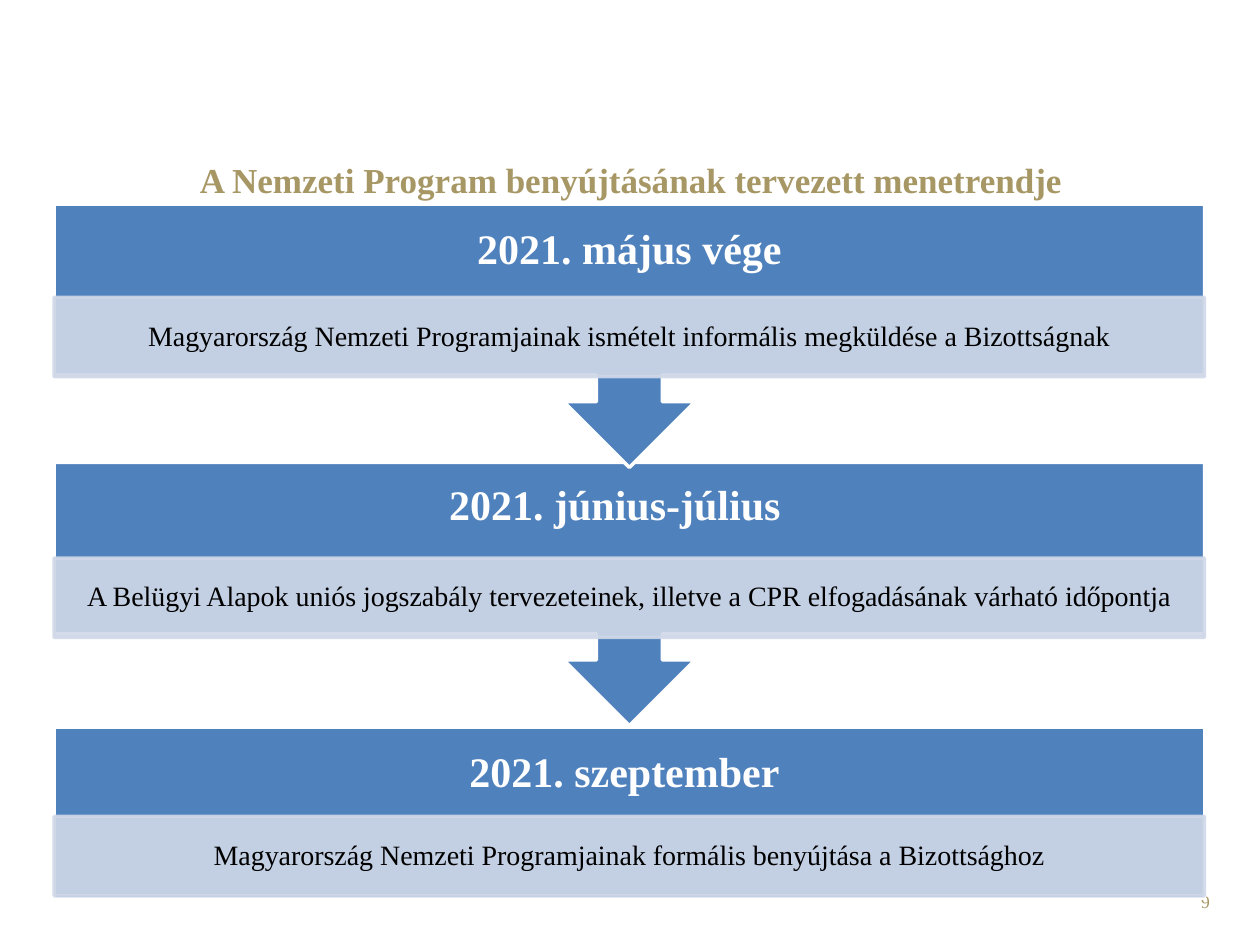
from lxml.etree import SubElement
from pptx import Presentation
from pptx.dml.color import RGBColor
from pptx.enum.shapes import MSO_SHAPE
from pptx.enum.text import MSO_ANCHOR, PP_ALIGN
from pptx.oxml.ns import qn
from pptx.util import Inches, Pt

FONT = "Times New Roman"
GOLD, BLUE, PALE, WHITE, BLACK = "A69765", "4F81BD", "D0D8E8", "FFFFFF", "000000"
LEFT, WIDTH = 0.43, 9.13
HEADING_HEIGHT, DETAIL_HEIGHT = 0.74, 0.63


def paint(color_format, color, opacity=100):
    """Make a fill solid in a hex colour at a percentage of opacity."""
    color_format.solid()
    color_format.fore_color.rgb = RGBColor.from_string(color)
    if opacity < 100:
        rgb = color_format._xPr.find(qn("a:solidFill"))[0]
        SubElement(rgb, qn("a:alpha"), val=str(opacity * 1000))


def write(frame, text, size, color, bold=False, align=PP_ALIGN.CENTER,
          anchor=MSO_ANCHOR.MIDDLE, insets=(0.1, 0.05), spacing=None):
    """Put one formatted run in a text frame."""
    frame.word_wrap = True
    frame.vertical_anchor = anchor
    frame.margin_left = frame.margin_right = Inches(insets[0])
    frame.margin_top = frame.margin_bottom = Inches(insets[1])
    paragraph = frame.paragraphs[0]
    paragraph.alignment = align
    if spacing:
        paragraph.line_spacing = spacing
    run = paragraph.add_run()
    run.text = text
    run.font.name, run.font.size, run.font.bold = FONT, Pt(size), bold
    run.font.color.rgb = RGBColor.from_string(color)


def add_text(slide, box, text, size, color, **style):
    """Add a text box at left, top, width, height."""
    write(slide.shapes.add_textbox(*map(Inches, box)).text_frame, text, size, color, **style)


def add_block(slide, kind, top, height, fill, line, opacity=100):
    """Add a full-width outlined block of the flow."""
    block = slide.shapes.add_shape(kind, *map(Inches, (LEFT, top, WIDTH, height)))
    block.shadow.inherit = False
    paint(block.fill, fill, opacity)
    paint(block.line.fill, line, opacity)
    block.line.width = Pt(2)
    return block


def add_step(slide, top, detail_top, detail, is_last):
    """Add one step: its block, with an arrow unless last, and its detail bar."""
    if is_last:
        add_block(slide, MSO_SHAPE.RECTANGLE, top, 1.36, BLUE, WHITE)
    else:
        add_block(slide, MSO_SHAPE.UP_ARROW_CALLOUT, top, 2.09, BLUE, WHITE).rotation = 180
    bar = add_block(slide, MSO_SHAPE.RECTANGLE, detail_top, DETAIL_HEIGHT, PALE, PALE, 90)
    write(bar.text_frame, detail, 16, BLACK, insets=(0.12, 0.02), spacing=0.9)


def add_heading(slide, top, text):
    """Add the date of a step across the top of its block."""
    add_text(slide, (LEFT, top, WIDTH, HEADING_HEIGHT), text, 24, WHITE,
             bold=True, insets=(0.19, 0.19), spacing=0.9)


def main():
    """Build the timetable slide."""
    deck = Presentation()
    deck.slide_width, deck.slide_height = Inches(10), Inches(7.5)
    slide = deck.slides.add_slide(deck.slide_layouts[6])

    add_text(slide, (7.37, 7.02, 2.33, 0.4), "9", 10, GOLD,
             align=PP_ALIGN.RIGHT, anchor=MSO_ANCHOR.TOP)
    add_text(slide, (0.51, 1.15, 9, 0.55),
             "A Nemzeti Program benyújtásának tervezett menetrendje", 20, GOLD, bold=True)

    steps = [
        (1.62, 2.36, "Magyarország Nemzeti Programjainak ismételt informális "
                     "megküldése a Bizottságnak"),
        (3.67, 4.43, "A Belügyi Alapok uniós jogszabály tervezeteinek, illetve a CPR "
                     "elfogadásának várható időpontja"),
        (5.77, 6.48, "Magyarország Nemzeti Programjainak formális benyújtása a Bizottsághoz"),
    ]
    for step in reversed(steps):
        add_step(slide, *step, is_last=step is steps[-1])

    add_heading(slide, 1.62, "2021. május vége")
    add_heading(slide, 5.77, "2021. szeptember ")
    add_text(slide, (2.95, 3.75, 3.86, 0.5), "2021. június-július", 24, WHITE,
             bold=True, anchor=MSO_ANCHOR.TOP)
    deck.save("out.pptx")


if __name__ == "__main__":
    main()
